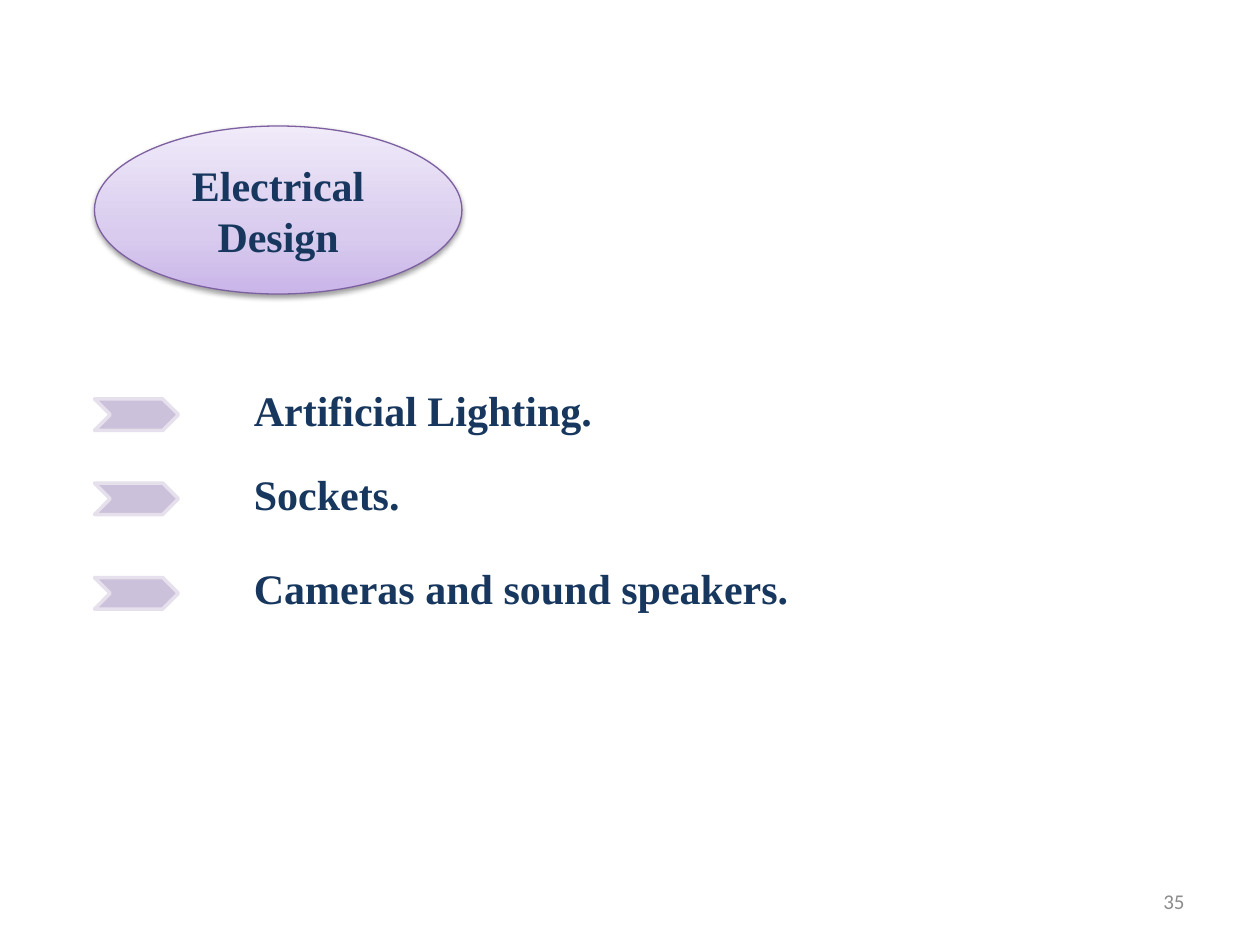
from lxml import etree
from pptx import Presentation
from pptx.dml.color import RGBColor
from pptx.enum.shapes import MSO_SHAPE as SHAPE
from pptx.enum.text import MSO_ANCHOR as ANCHOR, MSO_AUTO_SIZE as AUTO, PP_ALIGN as ALIGN
from pptx.oxml import parse_xml
from pptx.oxml.ns import nsdecls, qn
from pptx.util import Pt

TITLE = "Electrical Design"
ITEMS = [("Artificial Lighting.", 216, 215), ("Sockets.", 264, 99),
         ("Cameras and sound speakers.", 318, 323)]
PAGE_NUMBER = "35"

NAVY = RGBColor(0x17, 0x37, 0x5E)
GRAY = RGBColor(0x8C, 0x8C, 0x8C)
PURPLE = RGBColor(0x7D, 0x60, 0xA0)
LILAC = RGBColor(0xCC, 0xC1, 0xDA)
PALE = RGBColor(0xE6, 0xE0, 0xEC)
GRADIENT = [(0, RGBColor(0xC9, 0xB5, 0xE8)), (35, RGBColor(0xD8, 0xCB, 0xEE)),
            (100, RGBColor(0xF0, 0xEA, 0xF9))]

HEADING = {"name": "Times New Roman", "size": Pt(24), "bold": True}
NUMBER = {"name": "Calibri", "size": Pt(12)}
LEFT, TEXT_LEFT, ARROW_DROP = 54, 138, 12


def write(sp, text, font, color, align=ALIGN.LEFT, **frame):
    tf = sp.text_frame
    for key, value in frame.items():
        setattr(tf, key, value)
    p = tf.paragraphs[0]
    p.alignment = align
    r = p.add_run()
    r.text = text
    for key, value in font.items():
        setattr(r.font, key, value)
    r.font.color.rgb = color


def add_box(s, *box):
    return s.shapes.add_textbox(*map(Pt, box))


def add_shape(s, kind, box, line, width):
    sp = s.shapes.add_shape(kind, *map(Pt, box))
    sp.shadow.inherit = False
    sp.line.color.rgb = line
    sp.line.width = Pt(width)
    return sp


def set_gradient(sp, stops):
    sp.fill.gradient()
    sp.fill.gradient_angle = 90
    stop_list = sp._element.spPr.find(qn("a:gradFill")).find(qn("a:gsLst"))
    for old in list(stop_list):
        stop_list.remove(old)
    for percent, color in stops:
        gs = etree.SubElement(stop_list, qn("a:gs"), pos=str(percent * 1000))
        etree.SubElement(gs, qn("a:srgbClr"), val=str(color))


def set_shadow(sp, blur, distance, opacity):
    sp._element.spPr.find(qn("a:effectLst")).append(parse_xml(
        f'<a:outerShdw {nsdecls("a")} blurRad="{Pt(blur)}" dist="{Pt(distance)}" '
        f'dir="5400000" rotWithShape="0"><a:srgbClr val="000000">'
        f'<a:alpha val="{opacity * 1000}"/></a:srgbClr></a:outerShdw>'))


def main():
    prs = Presentation()
    prs.slide_width, prs.slide_height = Pt(720), Pt(540)
    s = prs.slides.add_slide(prs.slide_layouts[6])

    write(add_box(s, 516, 500.5, 168, 28.75), PAGE_NUMBER, NUMBER, GRAY, ALIGN.RIGHT,
          word_wrap=True, vertical_anchor=ANCHOR.MIDDLE)

    title = add_shape(s, SHAPE.OVAL, (LEFT, 72, 210, 96), PURPLE, 0.75)
    set_gradient(title, GRADIENT)
    set_shadow(title, 3.1, 1.6, 38)
    write(title, TITLE, HEADING, NAVY, ALIGN.CENTER,
          word_wrap=True, vertical_anchor=ANCHOR.MIDDLE)

    for text, top, width in ITEMS:
        write(add_box(s, TEXT_LEFT, top, width, 36), text, HEADING, NAVY,
              word_wrap=False, auto_size=AUTO.SHAPE_TO_FIT_TEXT)
        arrow = add_shape(s, SHAPE.CHEVRON, (LEFT, top + ARROW_DROP, 48, 18), PALE, 2)
        arrow.fill.solid()
        arrow.fill.fore_color.rgb = LILAC

    prs.save("out.pptx")


if __name__ == "__main__":
    main()
